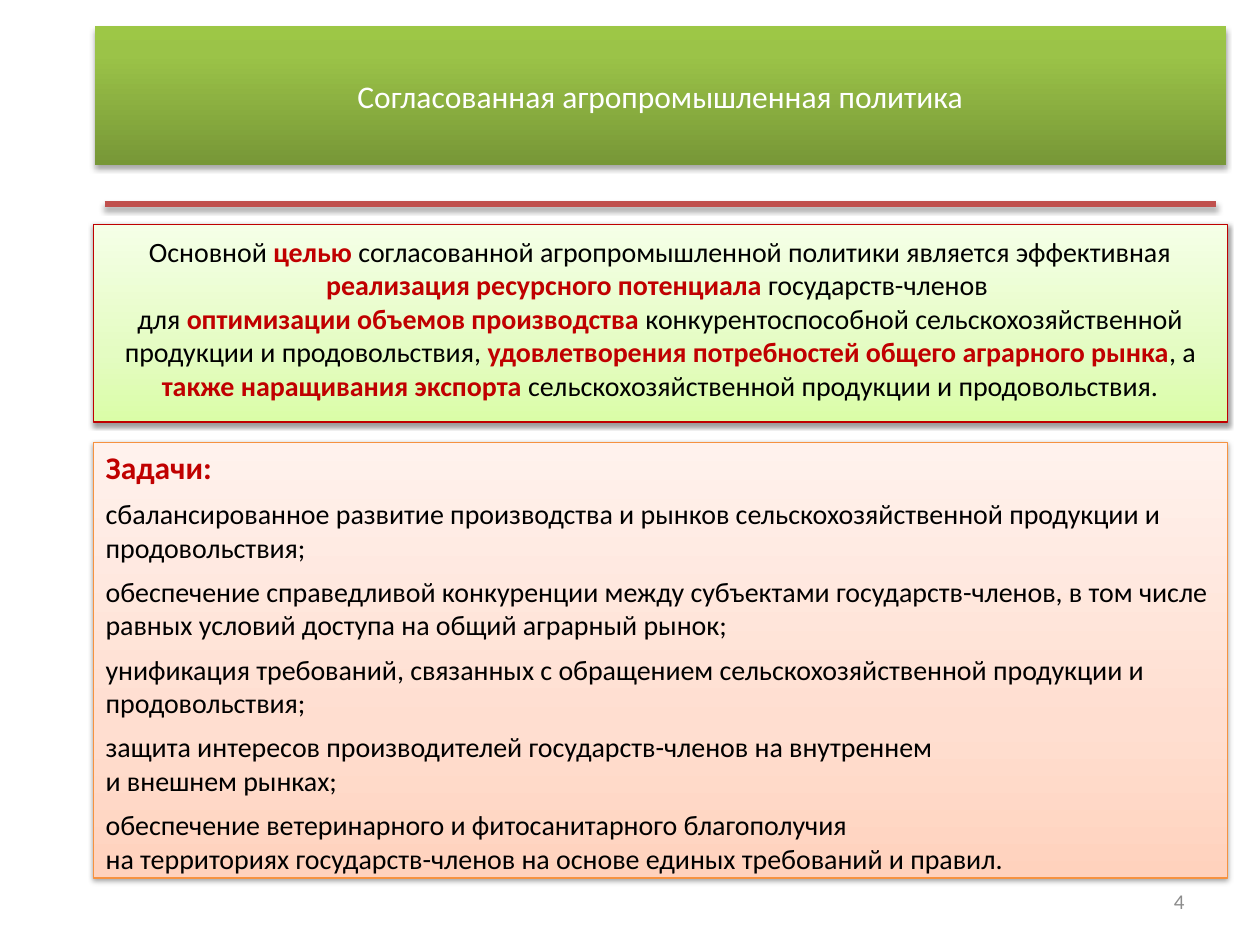
from lxml.etree import SubElement
from pptx import Presentation
from pptx.dml.color import RGBColor
from pptx.enum.shapes import MSO_CONNECTOR as CONN, MSO_SHAPE as SHAPE
from pptx.enum.text import MSO_ANCHOR as ANCHOR, MSO_AUTO_SIZE as AUTO, PP_ALIGN as ALIGN
from pptx.oxml.ns import qn
from pptx.util import Inches, Pt

BLACK, RED, WHITE = "000000", "C00000", "FFFFFF"

TITLE = "Согласованная агропромышленная политика"
GOAL = [
    ("Основной ", False),
    ("целью ", True),
    ("согласованной агропромышленной политики является эффективная ", False),
    ("реализация ресурсного потенциала ", True),
    ("государств-членов \nдля ", False),
    ("оптимизации объемов производства ", True),
    ("конкурентоспособной сельскохозяйственной продукции и продовольствия, ", False),
    ("удовлетворения потребностей общего аграрного рынка", True),
    (", а ", False),
    ("также наращивания экспорта ", True),
    ("сельскохозяйственной продукции и продовольствия.", False),
]
TASKS = [
    "сбалансированное развитие производства и рынков сельскохозяйственной продукции и продовольствия;",
    "обеспечение справедливой конкуренции между субъектами государств-членов, в том числе "
    "равных условий доступа на общий аграрный рынок;",
    "унификация требований, связанных с обращением сельскохозяйственной продукции и продовольствия;",
    "защита интересов производителей государств-членов на внутреннем \nи внешнем рынках;",
    "обеспечение ветеринарного и фитосанитарного благополучия \n"
    "на территориях государств-членов на основе единых требований и правил.",
]


def rgb(color):
    return RGBColor.from_string(color)


def add_text(p, text, size, color, bold=False):
    for i, part in enumerate(text.split("\n")):
        if i:
            p.add_line_break()
        r = p.add_run()
        r.text = part
        r.font.name = "Calibri"
        r.font.size = Pt(size)
        r.font.bold = bold
        r.font.color.rgb = rgb(color)


def set_gradient(sp, stops):
    sp.fill.gradient()
    sp.fill.gradient_angle = 90
    gs_list = next(sp._element.spPr.iter(qn("a:gsLst")))
    for gs in list(gs_list):
        gs_list.remove(gs)
    for pos, color in stops:
        gs = SubElement(gs_list, qn("a:gs"), pos=str(pos * 1000))
        SubElement(gs, qn("a:srgbClr"), val=color)


def set_shadow(sp, alpha, dist):
    effects = SubElement(sp._element.spPr, qn("a:effectLst"))
    shadow = SubElement(effects, qn("a:outerShdw"), blurRad=str(Pt(3.1)), dist=str(Pt(dist)),
                        dir="5400000", rotWithShape="0")
    color = SubElement(shadow, qn("a:srgbClr"), val=BLACK)
    SubElement(color, qn("a:alpha"), val=str(alpha * 1000))


def set_frame(sp, anchor):
    tf = sp.text_frame
    tf.word_wrap = True
    tf.auto_size = AUTO.NONE
    tf.vertical_anchor = anchor
    return tf


def add_title(s, x, y, w, h):
    sp = s.shapes.title
    sp.left, sp.top, sp.width, sp.height = map(Inches, (x, y, w, h))
    set_gradient(sp, [(0, "779737"), (80, "9BC348"), (100, "9DC746")])
    set_shadow(sp, 35, 1.8)
    p = set_frame(sp, ANCHOR.MIDDLE).paragraphs[0]
    p.alignment = ALIGN.CENTER
    add_text(p, TITLE, 18, WHITE)


def add_rule(s, x, y, w):
    line = s.shapes.add_connector(CONN.STRAIGHT, Inches(x), Inches(y), Inches(x + w), Inches(y))
    line.line.color.rgb = rgb("C0504D")
    line.line.width = Pt(3)
    set_shadow(line, 35, 1.8)


def add_panel(s, x, y, w, h, stops, border, anchor):
    sp = s.shapes.add_shape(SHAPE.RECTANGLE, *map(Inches, (x, y, w, h)))
    set_gradient(sp, stops)
    sp.line.color.rgb = rgb(border)
    sp.line.width = Pt(0.75)
    set_shadow(sp, 38, 1.6)
    return set_frame(sp, anchor)


def add_goal(s, x, y, w, h):
    stops = [(0, "DAFDA7"), (35, "E4FCC2"), (100, "F5FFE7")]
    tf = add_panel(s, x, y, w, h, stops, RED, ANCHOR.MIDDLE)
    tf.margin_bottom = Inches(0.13)
    p = tf.paragraphs[0]
    p.alignment = ALIGN.CENTER
    for text, key in GOAL:
        add_text(p, text, 16, RED if key else BLACK, key)


def add_tasks(s, x, y, w, h):
    stops = [(0, "FFD2BD"), (35, "FFDED0"), (100, "FFF2ED")]
    tf = add_panel(s, x, y, w, h, stops, "F69240", ANCHOR.TOP)
    p = tf.paragraphs[0]
    p.alignment = ALIGN.LEFT
    add_text(p, "Задачи:", 18, RED, True)
    for task in TASKS:
        p = tf.add_paragraph()
        p.alignment = ALIGN.LEFT
        p.space_before = Pt(6)
        add_text(p, task, 16, BLACK)


def add_page_number(s, x, y, w, h):
    tb = s.shapes.add_textbox(*map(Inches, (x, y, w, h)))
    p = set_frame(tb, ANCHOR.MIDDLE).paragraphs[0]
    p.alignment = ALIGN.RIGHT
    add_text(p, "4", 12, "8C8C8C")


def main():
    prs = Presentation()
    prs.slide_width, prs.slide_height = Inches(10), Inches(7.5)
    s = prs.slides.add_slide(prs.slide_layouts[5])
    add_title(s, 0.75, 0.21, 8.98, 1.1)
    add_rule(s, 0.83, 1.62, 8.82)
    add_goal(s, 0.74, 1.78, 9, 1.57)
    add_tasks(s, 0.74, 3.51, 9, 3.46)
    add_page_number(s, 7.17, 6.95, 2.33, 0.4)
    prs.save("out.pptx")


if __name__ == "__main__":
    main()
